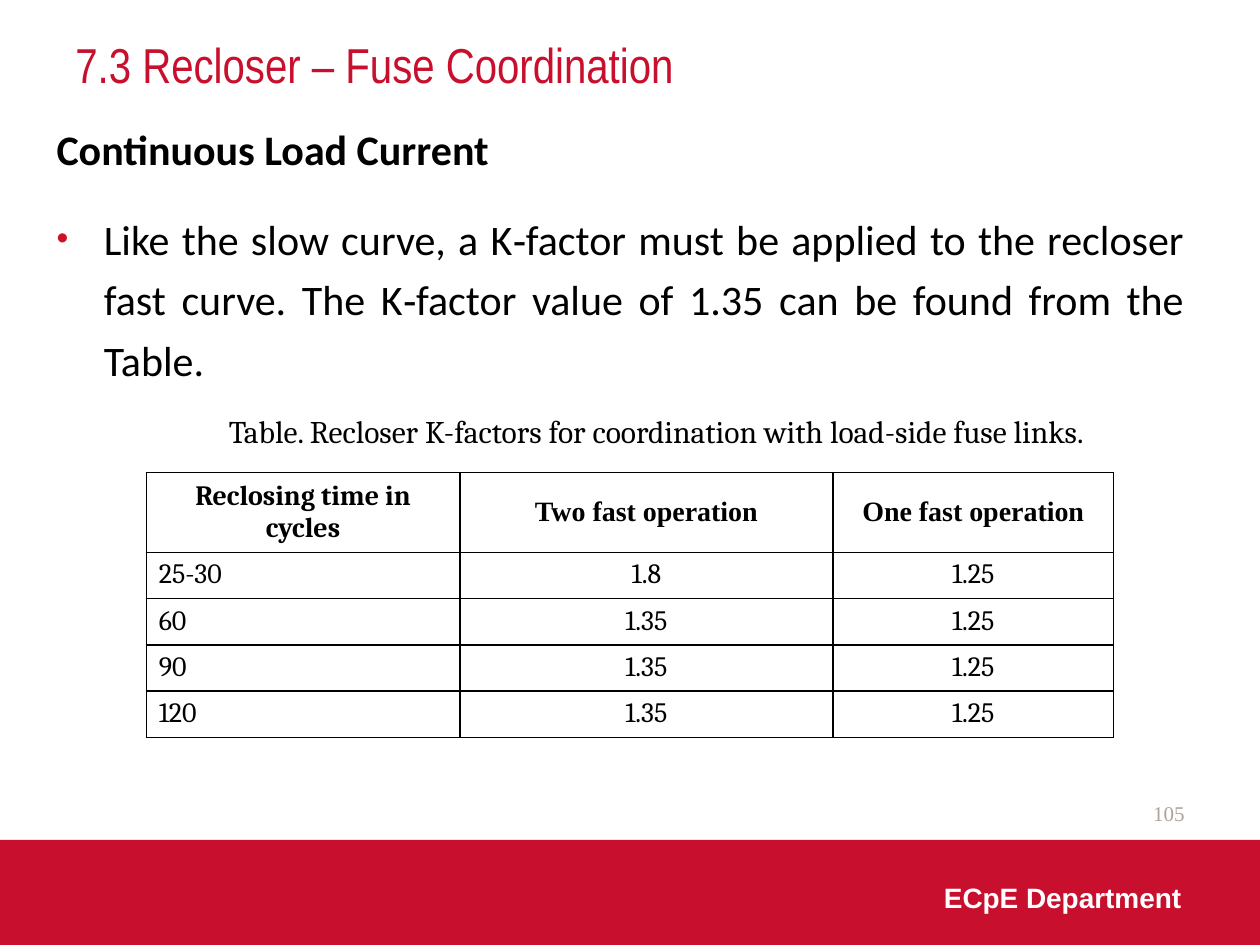
from lxml import etree
from pptx import Presentation
from pptx import util as u
from pptx.dml.color import RGBColor
from pptx.enum import shapes, text
from pptx.oxml.ns import qn

COLORS = {
    "red": "C8102E",
    "bullet": "CE1126",
    "black": "000000",
    "white": "FFFFFF",
    "grey": "ACA39A",
}
LEFT, CENTER, RIGHT, JUSTIFY = (
    text.PP_ALIGN.LEFT, text.PP_ALIGN.CENTER, text.PP_ALIGN.RIGHT, text.PP_ALIGN.JUSTIFY)
TOP, MIDDLE = text.MSO_ANCHOR.TOP, text.MSO_ANCHOR.MIDDLE


class SlideBuilder:
    def __init__(self, slide, colors):
        self.slide = slide
        self.colors = colors

    def rgb(self, color):
        return RGBColor.from_string(self.colors[color])

    def band(self, left, top, width, height, color):
        band = self.slide.shapes.add_shape(
            shapes.MSO_SHAPE.RECTANGLE, u.Pt(left), u.Pt(top), u.Pt(width), u.Pt(height))
        band.shadow.inherit = False
        band.fill.solid()
        band.fill.fore_color.rgb = self.rgb(color)
        band.line.fill.background()

    def frame(self, left, top, width, height, anchor=TOP):
        frame = self.slide.shapes.add_textbox(
            u.Pt(left), u.Pt(top), u.Pt(width), u.Pt(height)).text_frame
        frame.word_wrap = True
        frame.vertical_anchor = anchor
        return frame

    def add_words(self, paragraph, words, font, size, color="black", bold=False, align=LEFT):
        paragraph.alignment = align
        run = paragraph.add_run()
        run.text = words
        run.font.name = font
        run.font.size = u.Pt(size)
        run.font.bold = bold
        run.font.color.rgb = self.rgb(color)

    def label(self, box, words, font, size, anchor=MIDDLE, **style):
        self.add_words(self.frame(*box, anchor).paragraphs[0], words, font, size, **style)

    def bullet(self, paragraph, indent, color, percent):
        props = paragraph._p.get_or_add_pPr()
        props.set("marL", str(u.Pt(indent)))
        props.set("indent", str(-u.Pt(indent)))
        bullet_color = etree.SubElement(props, qn("a:buClr"))
        etree.SubElement(bullet_color, qn("a:srgbClr"), val=self.colors[color])
        etree.SubElement(props, qn("a:buSzPct"), val=str(percent * 1000))
        etree.SubElement(props, qn("a:buFont"), typeface="Arial")
        etree.SubElement(props, qn("a:buChar"), char="•")

    def borders(self, cell, color, width):
        props = cell._tc.get_or_add_tcPr()
        for position, side in enumerate(("a:lnL", "a:lnR", "a:lnT", "a:lnB")):
            line = etree.Element(qn(side), w=str(u.Pt(width)))
            fill = etree.SubElement(line, qn("a:solidFill"))
            etree.SubElement(fill, qn("a:srgbClr"), val=self.colors[color])
            props.insert(position, line)

    def table(self, left, top, widths, heights, rows, header_fonts, body_font, size):
        table = self.slide.shapes.add_table(
            len(rows), len(widths), u.Pt(left), u.Pt(top),
            u.Pt(sum(widths)), u.Pt(sum(heights))).table
        table.first_row = table.horz_banding = False
        for column, width in zip(table.columns, widths):
            column.width = u.Pt(width)
        for r, (row, height) in enumerate(zip(rows, heights)):
            table.rows[r].height = u.Pt(height)
            header = r == 0
            for c, words in enumerate(row):
                cell = table.cell(r, c)
                cell.fill.background()
                cell.vertical_anchor = MIDDLE if header else TOP
                self.borders(cell, "black", 1)
                self.add_words(cell.text_frame.paragraphs[0], words,
                               header_fonts[c] if header else body_font, size, bold=header,
                               align=CENTER if header or c else LEFT)


def main():
    deck = Presentation()
    deck.slide_width, deck.slide_height = u.Pt(720), u.Pt(540)
    page = SlideBuilder(deck.slides.add_slide(deck.slide_layouts[6]), COLORS)

    # Footer band
    page.band(0, 480, 720, 60, "red")

    # Title
    page.label((36, 12, 648, 49), "7.3 Recloser – Fuse Coordination",
               "Arial Narrow", 28, color="red")

    # Heading and bullet point
    body = page.frame(25.2, 61.2, 658.8, 403.2)
    heading, point = body.paragraphs[0], body.add_paragraph()
    for paragraph in (heading, point):
        paragraph.line_spacing = 1.2
        paragraph.space_after = u.Pt(12)
    point.space_before = u.Pt(4.8)
    page.bullet(point, 27, "bullet", 80)
    page.add_words(heading, "Continuous Load Current", "Calibri", 24, bold=True, align=JUSTIFY)
    page.add_words(point, "Like the slow curve, a K‐factor must be applied to the recloser "
                   "fast curve. The K‐factor value of 1.35 can be found from the Table.",
                   "Calibri", 24, align=JUSTIFY)

    # Page number and department
    page.label((516, 450, 168, 29), "105", "Times New Roman", 12, color="grey", align=RIGHT)
    page.label((530.5, 498.5, 153.5, 29), "ECpE Department", "Arial", 16,
               color="white", bold=True, align=CENTER)

    # K-factor table with its caption
    k_factors = [
        ("Reclosing time in cycles", "Two fast operation", "One fast operation"),
        ("25-30", "1.8", "1.25"),
        ("60", "1.35", "1.25"),
        ("90", "1.35", "1.25"),
        ("120", "1.35", "1.25"),
    ]
    page.table(83.6, 270, (179.2, 213.2, 160.4), [41] + [26.4] * 4, k_factors,
               ("Cambria", "Times New Roman", "Times New Roman"), "Cambria", 16)
    page.label((53.3, 231.8, 643.7, 29),
               "Table. Recloser K-factors for coordination with load-side fuse links.",
               "Cambria", 18, anchor=TOP, align=CENTER)

    deck.save("out.pptx")


if __name__ == "__main__":
    main()
